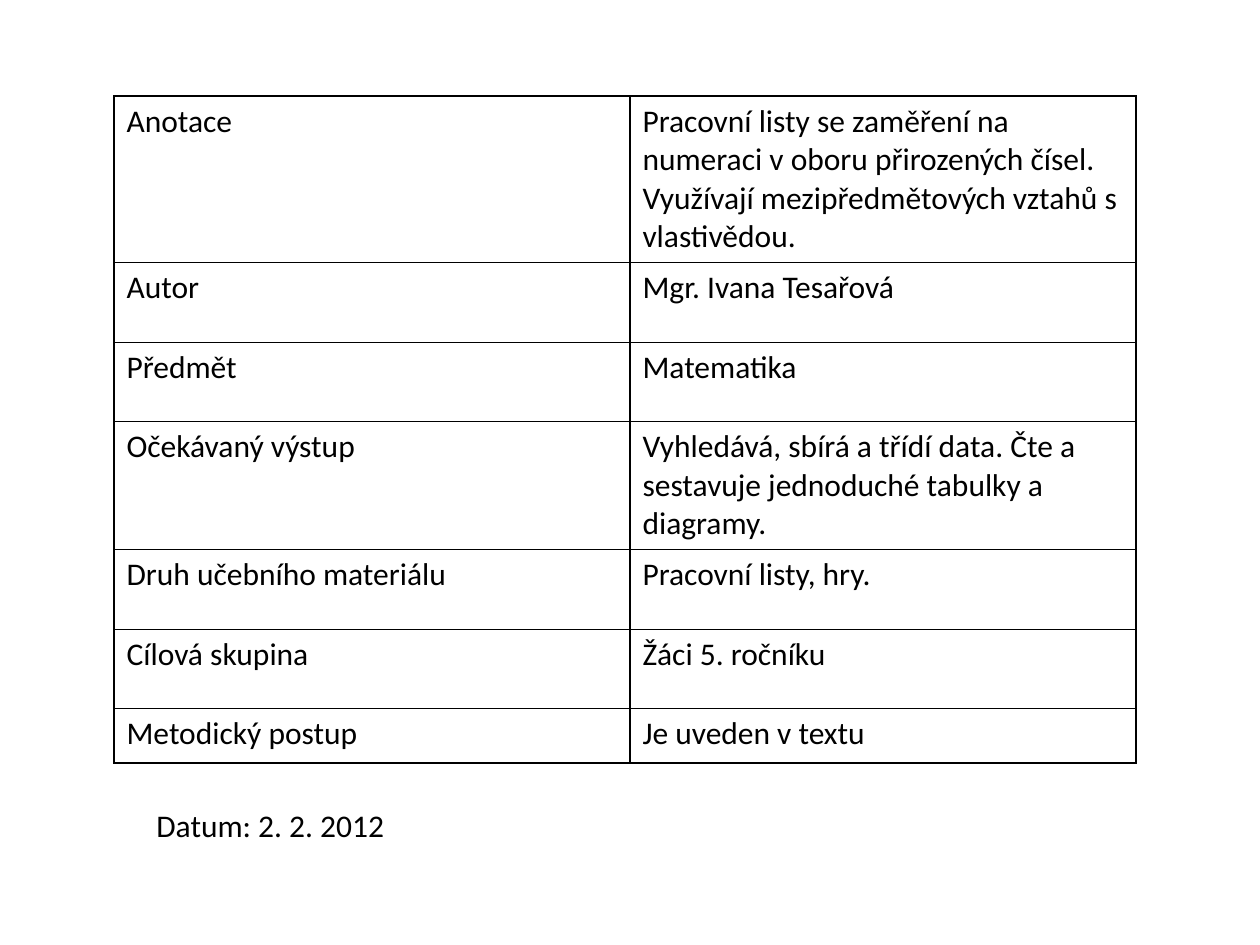
from lxml.etree import SubElement
from pptx import Presentation
from pptx.dml.color import RGBColor
from pptx.enum.text import MSO_AUTO_SIZE as AutoSize
from pptx.oxml.ns import qn
from pptx.util import Emu, Pt

BLACK = RGBColor(0, 0, 0)
PX_PER_INCH = 126


def px(length):
    return Emu(round(length * 914400 / PX_PER_INCH))


def style_text(text_frame):
    for paragraph in text_frame.paragraphs:
        for run in paragraph.runs:
            run.font.name = "Calibri"
            run.font.size = Pt(18)
            run.font.color.rgb = BLACK


prs = Presentation()
prs.slide_width, prs.slide_height = px(1260), px(945)
slide = prs.slides.add_slide(prs.slide_layouts[6])

# Details of the teaching material: label, value, row height
details = [
    ("Anotace", "Pracovní listy se zaměření na numeraci v oboru přirozených čísel. "
                "Využívají mezipředmětových vztahů s vlastivědou.", 166),
    ("Autor", "Mgr. Ivana Tesařová", 80),
    ("Předmět", "Matematika", 79),
    ("Očekávaný výstup", "Vyhledává, sbírá a třídí data. Čte a sestavuje "
                         "jednoduché tabulky a diagramy.", 128),
    ("Druh učebního materiálu", "Pracovní listy, hry.", 80),
    ("Cílová skupina", "Žáci 5. ročníku", 79),
    ("Metodický postup", "Je uveden v textu", 55),
]
column_widths = [516, 506]
total_height = sum(height for _, _, height in details)
table = slide.shapes.add_table(len(details), len(column_widths), px(114), px(96),
                               px(sum(column_widths)), px(total_height)).table
table.first_row = False
table.horz_banding = False
for column, width in zip(table.columns, column_widths):
    column.width = px(width)

for row, (label, value, height) in zip(table.rows, details):
    row.height = px(height)
    for cell, words in zip(row.cells, (label, value)):
        cell.text_frame.text = words
        style_text(cell.text_frame)
        # Thin black borders come before the fill in the cell properties
        cell_properties = cell._tc.get_or_add_tcPr()
        for side in ("a:lnL", "a:lnR", "a:lnT", "a:lnB"):
            border = SubElement(cell_properties, qn(side), w=str(Pt(1)))
            color_fill = SubElement(border, qn("a:solidFill"))
            SubElement(color_fill, qn("a:srgbClr"), val=str(BLACK))
        cell.fill.background()

# Date below the table
date = slide.shapes.add_textbox(px(144), px(800), px(256), px(50)).text_frame
date.word_wrap = False
date.auto_size = AutoSize.SHAPE_TO_FIT_TEXT
date.text = "Datum: 2. 2. 2012"
style_text(date)

prs.save("out.pptx")
